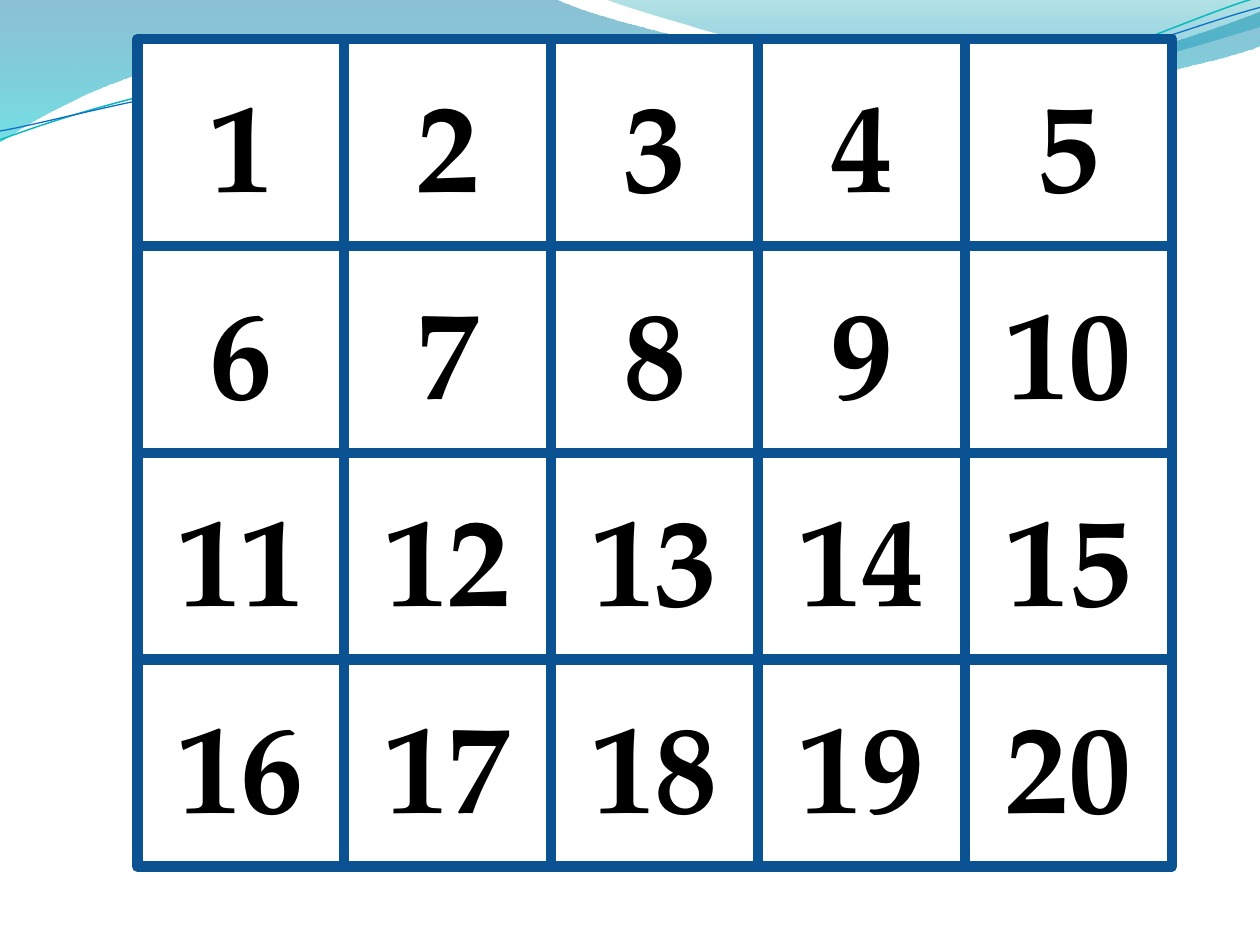
from dataclasses import dataclass
from math import cos, radians, sin

from lxml.etree import SubElement
from pptx import Presentation
from pptx.dml.color import RGBColor
from pptx.enum.shapes import MSO_SHAPE
from pptx.enum.text import MSO_ANCHOR, PP_ALIGN
from pptx.oxml.ns import qn
from pptx.util import Inches, Pt


@dataclass(frozen=True)
class Theme:
    font: str = "TeX Gyre Pagella"
    number_size: int = 72
    border_width: int = 6
    text: str = "000000"
    cell: str = "FFFFFF"
    border: str = "0B5292"
    wide_wave: tuple = ((0, "0074A1", 45), (1, "00C6CF", 55))
    right_wave: tuple = ((0, "00A1A9", 30), (0.8, "008BBF", 45))
    teal_line: str = "0AB8BF"
    blue_line: str = "0F6FC6"


THEME = Theme()
COLUMNS, ROWS = 5, 4
GRID_LEFT, GRID_TOP, GRID_WIDTH = 1.09, 0.31, 8.21
CELL_SIZE = GRID_WIDTH / COLUMNS
CURVE_ROTATION = 357.3

WIDE_WAVE = [
    [(0, 0)], [(4.4, -0.01)],
    [(4.76, 0.17), (6.64, 0.63), (7.58, 0.63)],
    [(8.53, 0.63), (9.58, 0.26), (10, 0.09)],
    [(10.01, 0.36)],
    [(9.83, 0.44), (8.7, 0.76), (7.46, 0.75)],
    [(6.22, 0.75), (3.82, 0.28), (2.57, 0.34)],
    [(1.29, 0.36), (0.46, 0.83), (-0.01, 1.13)],
    [(0, 0)],
]
RIGHT_WAVE = [
    [(4.79, -0.01)],
    [(5.09, 0.11), (6.82, 0.62), (7.69, 0.65)],
    [(8.56, 0.69), (9.61, 0.32), (10, 0.21)],
    [(10, 0)], [(4.79, -0.01)],
]
TEAL_CURVE = [
    [(0, 1.11)],
    [(0.48, 0.93), (1.58, 0.57), (2.77, 0.52)],
    [(3.95, 0.47), (5.93, 0.89), (7.13, 0.8)],
    [(8.33, 0.71), (9.38, 0.15), (9.98, -0.02)],
]
BLUE_CURVE = [
    [(0, 1.04)],
    [(0.47, 0.96), (1.64, 0.61), (2.83, 0.56)],
    [(4.03, 0.51), (5.97, 0.84), (7.17, 0.75)],
    [(8.36, 0.67), (9.41, 0.21), (10, 0.06)],
]


def rgb(value):
    return RGBColor.from_string(value)


def turn_point(point, center, degrees):
    angle = radians(degrees)
    x, y = point[0] - center[0], point[1] - center[1]
    return (center[0] + x * cos(angle) - y * sin(angle),
            center[1] + x * sin(angle) + y * cos(angle))


def bend_segments(shape, segments):
    lines = iter(list(shape._element.iter(qn("a:lnTo"))))
    for segment in segments:
        curve = next(lines)
        if len(segment) == 3:
            curve.tag = qn("a:cubicBezTo")
            for _ in segment[1:]:
                line = next(lines)
                curve.append(line[0])
                line.getparent().remove(line)


def add_outline(slide, outline, close):
    points = [(Inches(x), Inches(y)) for segment in outline for x, y in segment]
    builder = slide.shapes.build_freeform(*points[0])
    builder.add_line_segments(points[1:], close=close)
    shape = builder.convert_to_shape()
    bend_segments(shape, outline[1:])
    shape.shadow.inherit = False
    return shape


def add_wave(slide, outline, stops):
    shape = add_outline(slide, outline, close=True)
    shape.line.fill.background()
    shape.fill.gradient()
    shape.fill.gradient_angle = 270
    for stop, (position, color, _) in zip(shape.fill.gradient_stops, stops):
        stop.position = position
        stop.color.rgb = rgb(color)
    colors = list(shape._element.spPr.iter(qn("a:srgbClr")))
    for element, (_, _, opacity) in zip(colors, stops):
        SubElement(element, qn("a:alpha"), val=str(opacity * 1000))


def add_curve(slide, outline, center, color, width):
    level = [[turn_point(point, center, -CURVE_ROTATION) for point in segment]
             for segment in outline]
    shape = add_outline(slide, level, close=False)
    shape.rotation = CURVE_ROTATION
    shape.fill.background()
    shape.line.color.rgb = rgb(color)
    shape.line.width = Pt(width)


def write_text(shape, text, *, size, color, font, bold=False, align=PP_ALIGN.CENTER):
    frame = shape.text_frame
    frame.word_wrap = True
    frame.vertical_anchor = MSO_ANCHOR.MIDDLE
    paragraph = frame.paragraphs[0]
    paragraph.alignment = align
    run = paragraph.add_run()
    run.text = text
    run.font.size = Pt(size)
    run.font.name = font
    run.font.bold = bold
    run.font.color.rgb = rgb(color)


def add_number_cell(slide, number):
    row, column = divmod(number - 1, COLUMNS)
    shape = slide.shapes.add_shape(
        MSO_SHAPE.ACTION_BUTTON_CUSTOM,
        Inches(GRID_LEFT + column * CELL_SIZE),
        Inches(GRID_TOP + row * CELL_SIZE),
        Inches(CELL_SIZE),
        Inches(CELL_SIZE),
    )
    shape.shadow.inherit = False
    shape.fill.solid()
    shape.fill.fore_color.rgb = rgb(THEME.cell)
    shape.line.color.rgb = rgb(THEME.border)
    shape.line.width = Pt(THEME.border_width)
    write_text(shape, str(number), size=THEME.number_size, color=THEME.text,
               font=THEME.font, bold=True)


def main():
    presentation = Presentation()
    presentation.slide_width = Inches(10)
    presentation.slide_height = Inches(7.5)
    slide = presentation.slides.add_slide(presentation.slide_layouts[6])
    add_wave(slide, WIDE_WAVE, THEME.wide_wave)
    add_wave(slide, RIGHT_WAVE, THEME.right_wave)
    add_curve(slide, TEAL_CURVE, (4.99, 0.58), THEME.teal_line, 0.85)
    add_curve(slide, BLUE_CURVE, (5, 0.59), THEME.blue_line, 0.75)
    for number in range(1, COLUMNS * ROWS + 1):
        add_number_cell(slide, number)
    presentation.save("out.pptx")


if __name__ == "__main__":
    main()
